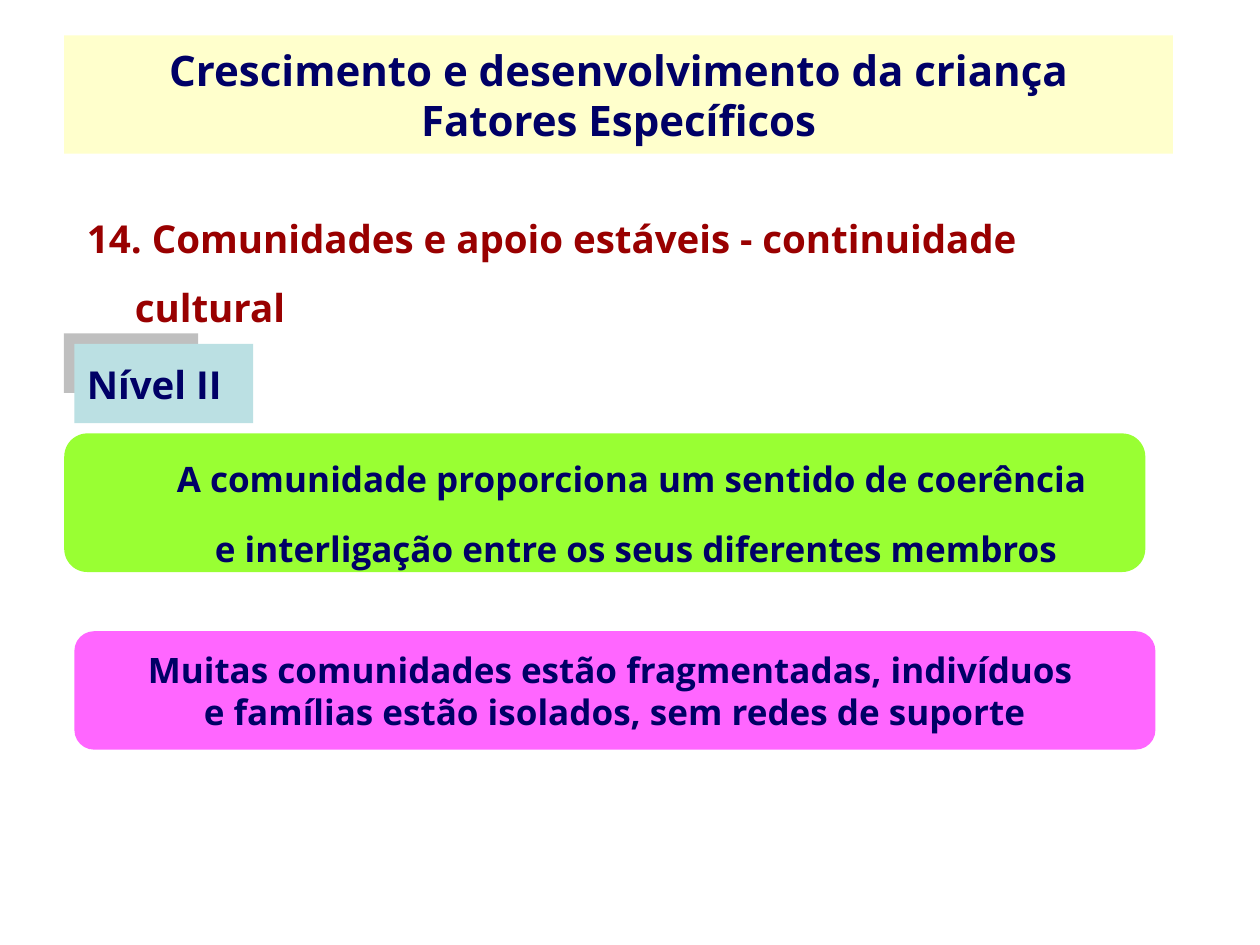
from dataclasses import dataclass

from lxml import etree
from pptx import Presentation
from pptx.dml.color import RGBColor
from pptx.enum.shapes import MSO_SHAPE
from pptx.enum.text import MSO_ANCHOR, MSO_AUTO_SIZE, PP_ALIGN
from pptx.oxml import parse_xml
from pptx.oxml.ns import nsdecls, qn
from pptx.util import Inches, Pt

RECTANGLE, ROUNDED = MSO_SHAPE.RECTANGLE, MSO_SHAPE.ROUNDED_RECTANGLE
CENTER, LEFT = PP_ALIGN.CENTER, PP_ALIGN.LEFT
TOP, MIDDLE = MSO_ANCHOR.TOP, MSO_ANCHOR.MIDDLE
NO_FIT = MSO_AUTO_SIZE.NONE


@dataclass(frozen=True)
class Theme:
    font: str = "Open Sans"
    navy: str = "000066"
    red: str = "990000"
    cream: str = "FFFFCC"
    blue: str = "BBE0E3"
    green: str = "99FF33"
    pink: str = "FF66FF"
    shadow: str = "808080"
    title_size: int = 24
    body_size: int = 22
    panel_size: int = 20


@dataclass(frozen=True)
class Frame:
    left: float
    top: float
    width: float
    height: float

    def lengths(self) -> list:
        return [Inches(n) for n in (self.left, self.top, self.width, self.height)]


@dataclass(frozen=True)
class Panel:
    frame: Frame
    color: str
    lines: tuple
    indent: float = 0
    spacing: float = 1
    before: float = 0


THEME = Theme()
TITLE_FRAME = Frame(0.51, 0.28, 8.8, 0.94)
BODY_FRAME = Frame(0.59, 1.47, 8.66, 5.28)
LEVEL_FRAME = Frame(0.59, 2.73, 1.42, 0.63)
COMMUNITY = Panel(
    Frame(0.51, 3.44, 8.58, 1.1), THEME.green,
    ("A comunidade proporciona um sentido de coerência ",
     "e interligação entre os seus diferentes membros"),
    indent=0.5, spacing=1.5, before=4)
FRAGMENTED = Panel(
    Frame(0.59, 5.01, 8.58, 0.94), THEME.pink,
    ("Muitas comunidades estão fragmentadas, indivíduos ",
     "e famílias estão isolados, sem redes de suporte"))


def paint(shape, color: str) -> None:
    shape.fill.solid()
    shape.fill.fore_color.rgb = RGBColor.from_string(color)


def place(shape, frame: Frame) -> None:
    shape.left, shape.top, shape.width, shape.height = frame.lengths()


def prepare(text_frame, anchor, wrap: bool) -> None:
    text_frame.auto_size = NO_FIT
    text_frame.word_wrap = wrap
    text_frame.vertical_anchor = anchor


def write(para, text: str, *, size: int, color: str = THEME.navy, align=CENTER,
          spacing: float = 1, before: float = 0, indent: float = 0,
          hanging: float = 0) -> None:
    """Fill a paragraph with bold, unbulleted text; \\v breaks a line."""
    para.text = text
    para.alignment = align
    para.line_spacing = spacing
    para.space_before = Pt(before)
    properties = para._p.get_or_add_pPr()
    properties.set("marL", str(Inches(indent)))
    properties.set("indent", str(-Inches(hanging)))
    etree.SubElement(properties, qn("a:buNone"))
    for span in para.runs:
        span.font.name = THEME.font
        span.font.size = Pt(size)
        span.font.bold = True
        span.font.color.rgb = RGBColor.from_string(color)


def add_box(page, kind, frame: Frame, color: str):
    box = page.shapes.add_shape(kind, *frame.lengths())
    box.shadow.inherit = False
    box.line.fill.background()
    paint(box, color)
    return box


def add_panel(page, panel: Panel):
    box = add_box(page, ROUNDED, panel.frame, panel.color)
    prepare(box.text_frame, MIDDLE, False)
    for index, line in enumerate(panel.lines):
        para = box.text_frame.add_paragraph() if index else box.text_frame.paragraphs[0]
        write(para, line, size=THEME.panel_size, indent=panel.indent,
              spacing=panel.spacing, before=panel.before)
    return box


def add_shadow(box) -> None:
    """Cast a smaller, half-transparent shadow to the upper left."""
    effects = box.element.spPr.find(qn("a:effectLst"))
    effects.append(parse_xml(
        f'<a:outerShdw {nsdecls("a")} dist="{Pt(8.5)}" dir="{225 * 60000}" '
        f'sx="75000" sy="75000" algn="tl" rotWithShape="0">'
        f'<a:srgbClr val="{THEME.shadow}"><a:alpha val="50000"/></a:srgbClr>'
        f'</a:outerShdw>'))


def main() -> None:
    deck = Presentation()
    deck.slide_width, deck.slide_height = Inches(10), Inches(7.5)
    page = deck.slides.add_slide(deck.slide_layouts[1])
    title, body = page.shapes.title, page.placeholders[1]

    # Title band
    place(title, TITLE_FRAME)
    paint(title, THEME.cream)
    prepare(title.text_frame, MIDDLE, True)
    write(title.text_frame.paragraphs[0],
          "Crescimento e desenvolvimento da criança\vFatores Específicos",
          size=THEME.title_size)

    # Factor and its level
    place(body, BODY_FRAME)
    prepare(body.text_frame, TOP, True)
    entries = (("14. Comunidades e apoio estáveis - continuidade cultural", THEME.red),
               ("Nível II", THEME.navy))
    for index, (text, color) in enumerate(entries):
        para = body.text_frame.add_paragraph() if index else body.text_frame.paragraphs[0]
        write(para, text, size=THEME.body_size, color=color, align=LEFT,
              spacing=1.5, before=4.4, indent=0.38, hanging=0.38)

    # Panels, with the first one and the level box behind the body text
    community = add_panel(page, COMMUNITY)
    level = add_box(page, RECTANGLE, LEVEL_FRAME, THEME.blue)
    add_shadow(level)
    for shape in (community, level):
        body.element.addprevious(shape.element)
    add_panel(page, FRAGMENTED)

    deck.save("out.pptx")


if __name__ == "__main__":
    main()
